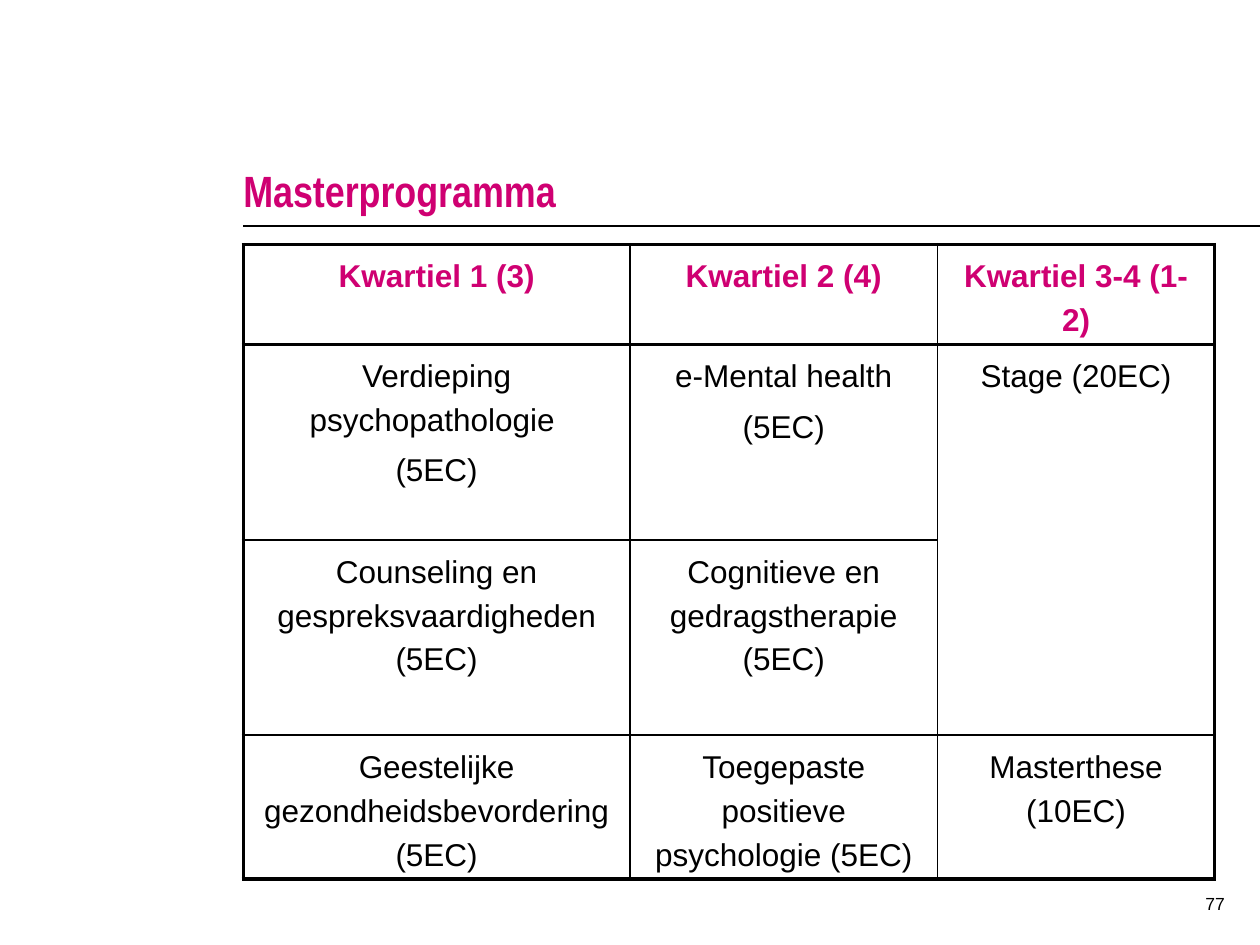
from lxml import etree
from pptx import Presentation
from pptx import util as u
from pptx.dml.color import RGBColor
from pptx.enum import shapes, text
from pptx.oxml.ns import qn

TITLE = "Masterprogramma"
PAGE_NUMBER = "77"
PROGRAMME = [
    [["Kwartiel 1 (3)"], ["Kwartiel 2 (4)"], ["Kwartiel 3-4 (1-2)"]],
    [["Verdieping psychopathologie ", "(5EC)"], ["e-Mental health", "(5EC)"], ["Stage (20EC)"]],
    [["Counseling en gespreksvaardigheden (5EC)"], ["Cognitieve en gedragstherapie (5EC)"], []],
    [["Geestelijke gezondheidsbevordering (5EC)"], ["Toegepaste positieve psychologie (5EC)"],
     ["Masterthese (10EC)"]],
]
COLUMN_WIDTHS = [221, 175.7, 158.4]
ROW_HEIGHTS = [57, 111.6, 111.6, 82]
LEFT = 139
PAGE_WIDTH, PAGE_HEIGHT = 720, 540

THEME = {
    "accent": RGBColor(0xCF, 0x00, 0x72),
    "ink": RGBColor(0, 0, 0),
    "body_font": "Arial",
    "title_font": "Arial Narrow",
    "title_size": 25,
    "cell_size": 18,
    "number_size": 10,
    "thin": 1,
    "thick": 2.25,
}


def add_span(para, wording, size, font, colour, bold=False):
    span = para.add_run()
    span.text = wording
    span.font.size = u.Pt(size)
    span.font.name = font
    span.font.bold = bold
    span.font.color.rgb = colour


def add_box(page, place, insets, anchor):
    box = page.shapes.add_textbox(*[u.Pt(length) for length in place])
    frame = box.text_frame
    frame.word_wrap = True
    frame.vertical_anchor = anchor
    (frame.margin_left, frame.margin_top,
     frame.margin_right, frame.margin_bottom) = [u.Pt(inset) for inset in insets]
    return frame.paragraphs[0]


def add_rule(page):
    rule = page.shapes.add_connector(
        shapes.MSO_CONNECTOR.STRAIGHT, u.Pt(LEFT), u.Pt(129), u.Pt(PAGE_WIDTH), u.Pt(129))
    rule.line.color.rgb = THEME["ink"]
    rule.line.width = u.Pt(THEME["thin"])
    etree.SubElement(rule._element.spPr, qn("a:effectLst"))


def set_borders(cell, thick_sides):
    properties = cell._tc.get_or_add_tcPr()
    for side in ("L", "R", "T", "B"):
        width = THEME["thick"] if side in thick_sides else THEME["thin"]
        line = etree.SubElement(properties, qn(f"a:ln{side}"), w=str(u.Pt(width)))
        fill = etree.SubElement(line, qn("a:solidFill"))
        etree.SubElement(fill, qn("a:srgbClr"), val=str(THEME["ink"]))


def thick_sides(row, column):
    rules = {
        "L": column == 0,
        "R": column == len(COLUMN_WIDTHS) - 1,
        "T": row <= 1,
        "B": row in (0, len(ROW_HEIGHTS) - 1),
    }
    return [side for side, is_thick in rules.items() if is_thick]


def fill_cell(cell, wordings, is_header):
    cell.margin_left = cell.margin_right = u.Pt(7.2)
    cell.margin_top = cell.margin_bottom = u.Pt(3.6)
    colour = THEME["accent"] if is_header else THEME["ink"]
    frame = cell.text_frame
    for index, wording in enumerate(wordings):
        para = frame.add_paragraph() if index else frame.paragraphs[0]
        para.alignment = text.PP_ALIGN.CENTER
        para.line_spacing = u.Pt(25)
        if index:
            para.space_before = u.Pt(3.6)
        add_span(para, wording, THEME["cell_size"], THEME["body_font"], colour, is_header)


def add_programme(page):
    frame = page.shapes.add_table(
        len(ROW_HEIGHTS), len(COLUMN_WIDTHS), u.Pt(LEFT), u.Pt(139.7),
        u.Pt(sum(COLUMN_WIDTHS)), u.Pt(sum(ROW_HEIGHTS)))
    table = frame.table
    table.first_row = table.horz_banding = False
    for column, width in zip(table.columns, COLUMN_WIDTHS):
        column.width = u.Pt(width)
    for row, height in zip(table.rows, ROW_HEIGHTS):
        row.height = u.Pt(height)
    for r, cells in enumerate(PROGRAMME):
        for c, wordings in enumerate(cells):
            cell = table.cell(r, c)
            fill_cell(cell, wordings, r == 0)
            set_borders(cell, thick_sides(r, c))
            cell.fill.background()
    table.cell(1, 2).merge(table.cell(2, 2))


def main():
    deck = Presentation()
    deck.slide_width, deck.slide_height = u.Pt(PAGE_WIDTH), u.Pt(PAGE_HEIGHT)
    page = deck.slides.add_slide(deck.slide_layouts[6])
    add_rule(page)

    number = add_box(page, (670.3, 504, 29.5, 37.4), (7.2, 3.6, 0, 3.6), text.MSO_ANCHOR.TOP)
    number.alignment = text.PP_ALIGN.RIGHT
    number.line_spacing = u.Pt(15)
    add_span(number, PAGE_NUMBER, THEME["number_size"], THEME["body_font"], THEME["ink"])

    title = add_box(page, (LEFT, 82.8, 560.9, 41), (0, 3.6, 7.2, 0), text.MSO_ANCHOR.BOTTOM)
    add_span(title, TITLE, THEME["title_size"], THEME["title_font"], THEME["accent"], True)

    add_programme(page)
    deck.save("out.pptx")


if __name__ == "__main__":
    main()
